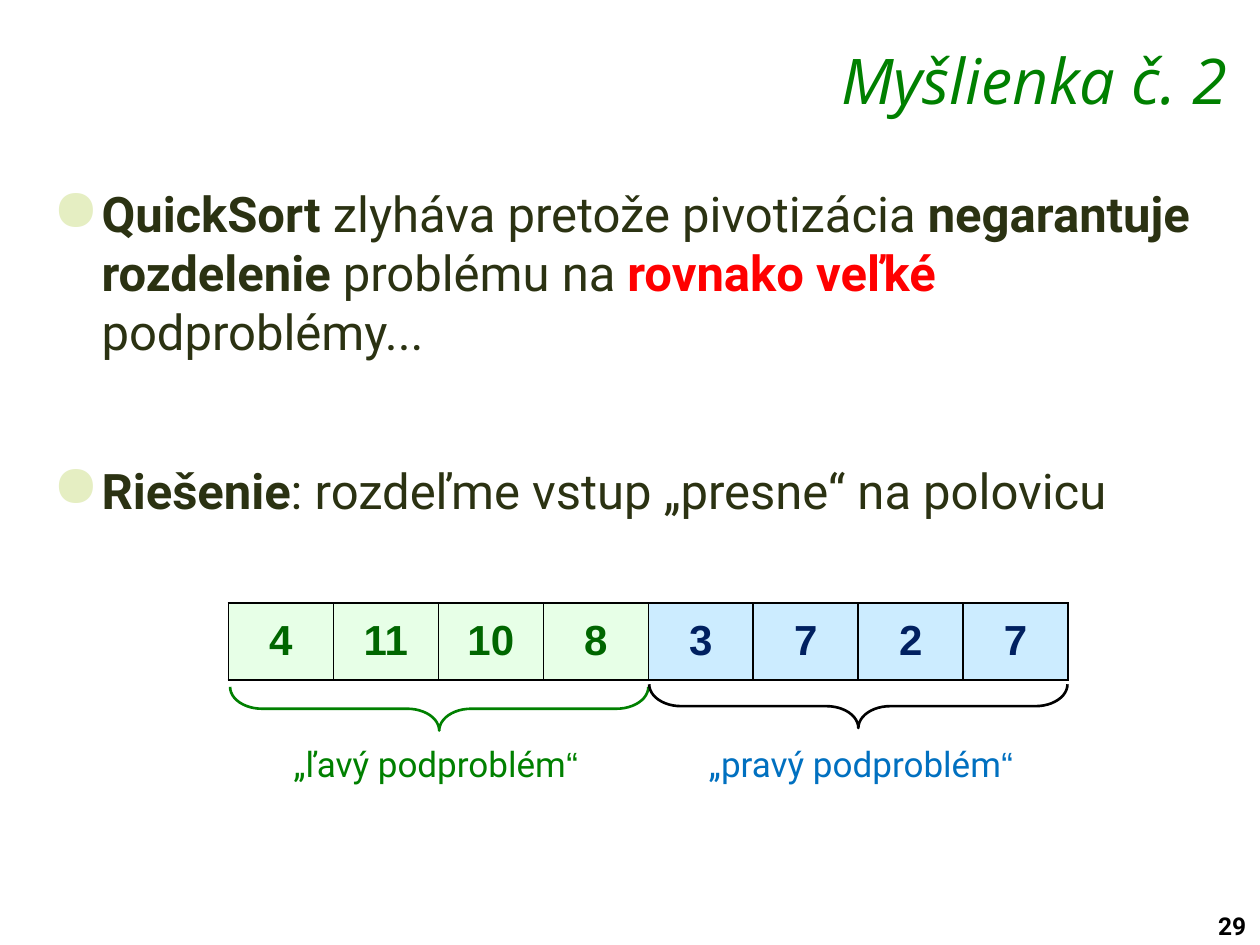
from pptx import Presentation
from pptx.dml.color import RGBColor
from pptx.enum import shapes, text
from pptx.oxml import parse_xml
from pptx.oxml.ns import nsdecls
from pptx.util import Pt

GREEN = RGBColor(0x00, 0x80, 0x00)
DARK_GREEN = RGBColor(0x00, 0x66, 0x00)
PALE_GREEN = RGBColor(0xE7, 0xFF, 0xE7)
BLUE = RGBColor(0x00, 0x70, 0xC0)
NAVY = RGBColor(0x00, 0x20, 0x60)
PALE_BLUE = RGBColor(0xCC, 0xEC, 0xFF)
OLIVE = RGBColor(0x2B, 0x32, 0x12)
RED = RGBColor(0xFF, 0x00, 0x00)
BLACK = RGBColor(0x00, 0x00, 0x00)
BULLET = "E5EEC2"

# Content: each run is (text, bold, colour)
TITLE = "Myšlienka č. 2"
PAGE = "29"
BULLETS = [
    [("QuickSort", True, OLIVE),
     (" zlyháva pretože pivotizácia ", False, OLIVE),
     ("negarantuje rozdelenie ", True, OLIVE),
     ("problému na ", False, OLIVE),
     ("rovnako veľké ", True, RED),
     ("podproblémy...", False, OLIVE)],
    [("Riešenie", True, OLIVE),
     (": rozdeľme vstup „presne“ na polovicu", False, OLIVE)],
]
# Halves: values, text colour, fill, brace (colour, top), label (text, colour, left, width)
HALVES = [
    (["4", "11", "10", "8"], DARK_GREEN, PALE_GREEN, (GREEN, 392.5),
     ("„ľavý podproblém", GREEN, 155.5, 187)),
    (["3", "7", "2", "7"], NAVY, PALE_BLUE, (BLACK, 391),
     ("„pravý podproblém", BLUE, 383, 218)),
]
TABLE_LEFT, TABLE_TOP, CELL_W, CELL_H = 130.5, 344.5, 60, 44
BRACE_W, BRACE_H = 239, 25


def add_run(p, words, size, color, font="Roboto", bold=False, italic=False):
    r = p.add_run()
    r.text = words
    f = r.font
    f.name, f.size, f.bold, f.italic = font, Pt(size), bold, italic
    f.color.rgb = color


def add_box(s, left, top, width, height, align=text.PP_ALIGN.LEFT):
    tf = s.shapes.add_textbox(Pt(left), Pt(top), Pt(width), Pt(height)).text_frame
    tf.word_wrap = True
    tf.paragraphs[0].alignment = align
    return tf


def add_bullet(p):
    pPr = p._p.get_or_add_pPr()
    pPr.set("marL", str(Pt(28)))
    pPr.set("indent", str(Pt(-28)))
    for xml in (f'<a:buClr {nsdecls("a")}><a:srgbClr val="{BULLET}"/></a:buClr>',
                f'<a:buSzPct {nsdecls("a")} val="120000"/>',
                f'<a:buChar {nsdecls("a")} char="●"/>'):
        pPr.append(parse_xml(xml))


def add_borders(cell):
    tcPr = cell._tc.get_or_add_tcPr()
    for i, side in enumerate(("lnL", "lnR", "lnT", "lnB")):
        tcPr.insert(i, parse_xml(
            f'<a:{side} {nsdecls("a")} w="{Pt(1)}"><a:solidFill>'
            f'<a:srgbClr val="{BLACK}"/></a:solidFill></a:{side}>'))


prs = Presentation()
prs.slide_width, prs.slide_height = Pt(720), Pt(540)
s = prs.slides.add_slide(prs.slide_layouts[6])

# Page number and title
add_run(add_box(s, 689, 517, 37, 24).paragraphs[0], PAGE, 14, BLACK, bold=True)
tf = add_box(s, 165, 23.5, 543.5, 42, text.PP_ALIGN.RIGHT)
tf.margin_top = tf.margin_bottom = 0
add_run(tf.paragraphs[0], TITLE, 36, GREEN, "Open Sans", italic=True)

# Bullets
tf = add_box(s, 23, 101.5, 675.5, 417)
for i, runs in enumerate(BULLETS):
    p = tf.add_paragraph() if i else tf.paragraphs[0]
    if i:
        p.space_before = Pt(57)
    add_bullet(p)
    for words, bold, color in runs:
        add_run(p, words, 28, color, bold=bold)

# Array split into two halves
cells = [(v, color, fill) for values, color, fill, *_ in HALVES for v in values]
table = s.shapes.add_table(1, len(cells), Pt(TABLE_LEFT), Pt(TABLE_TOP),
                           Pt(CELL_W * len(cells)), Pt(CELL_H)).table
table.first_row = table.horz_banding = False
table.rows[0].height = Pt(CELL_H)
for i, (value, color, fill) in enumerate(cells):
    table.columns[i].width = Pt(CELL_W)
    cell = table.cell(0, i)
    cell.fill.solid()
    cell.fill.fore_color.rgb = fill
    add_borders(cell)
    cell.vertical_anchor = text.MSO_ANCHOR.MIDDLE
    p = cell.text_frame.paragraphs[0]
    p.alignment = text.PP_ALIGN.CENTER
    add_run(p, value, 24, color, "Arial", bold=True)

# Braces and labels below each half
for i, (*_, (color, top), (label, label_color, left, width)) in enumerate(HALVES):
    center_x = TABLE_LEFT + 120.5 + i * (BRACE_W + 0.5)
    center_y = top + BRACE_H / 2
    sp = s.shapes.add_shape(shapes.MSO_SHAPE.LEFT_BRACE,
                            Pt(center_x - BRACE_H / 2), Pt(center_y - BRACE_W / 2),
                            Pt(BRACE_H), Pt(BRACE_W))
    sp.rotation = 270
    sp.adjustments[0], sp.adjustments[1] = 0.73, 0.5
    sp.shadow.inherit = False
    sp.fill.background()
    sp.line.color.rgb = color
    sp.line.width = Pt(1.5)
    p = add_box(s, left, 421, width, 32, text.PP_ALIGN.CENTER).paragraphs[0]
    add_run(p, label, 20, label_color)
    add_run(p, "“", 20, label_color, "Arial")

prs.save("out.pptx")
